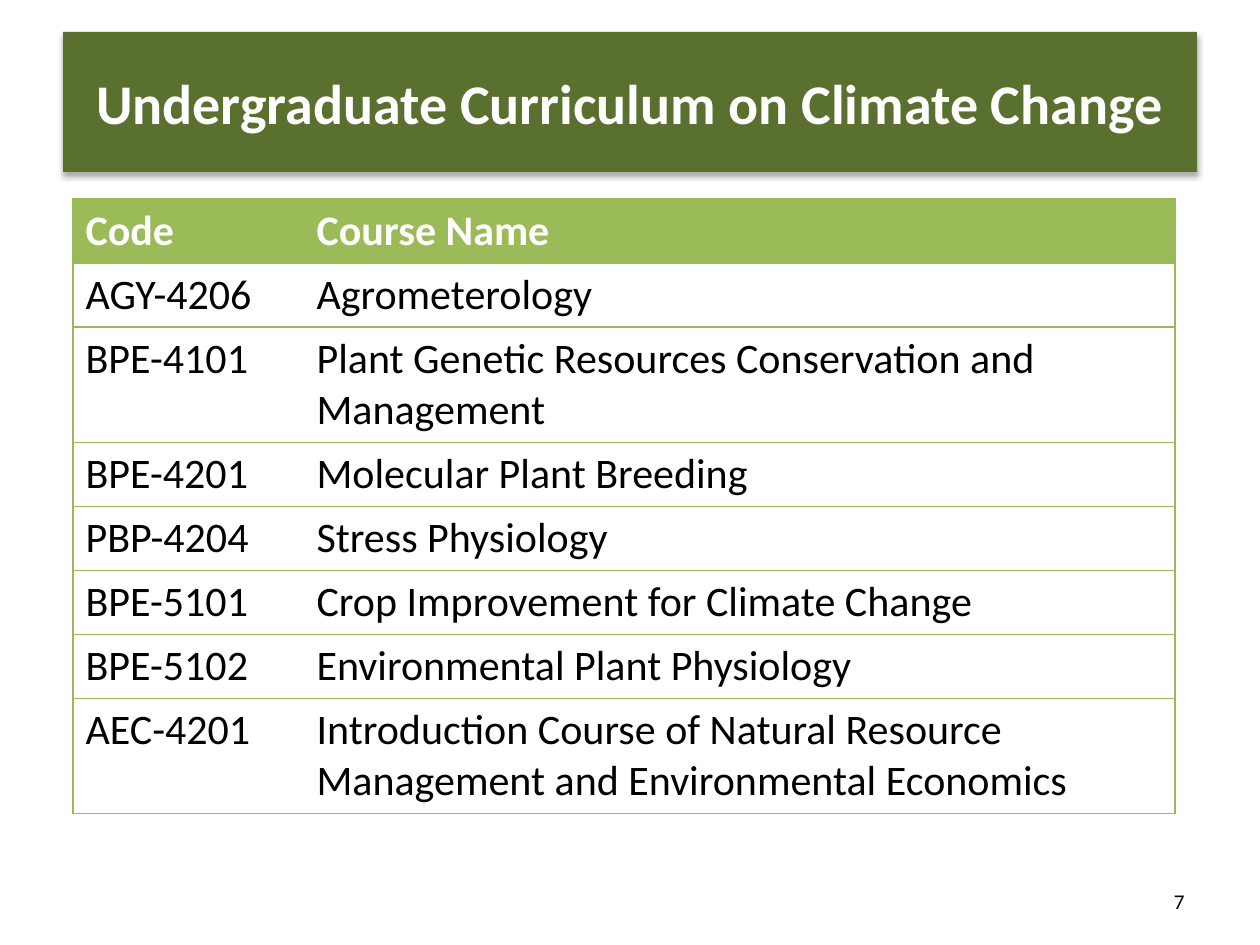
"""Build the slide that lists undergraduate courses on climate change."""
from lxml.etree import SubElement
from pptx import Presentation
from pptx.dml.color import RGBColor
from pptx.enum.text import MSO_ANCHOR, PP_ALIGN
from pptx.oxml.ns import qn
from pptx.util import Pt

TITLE = "Undergraduate Curriculum on Climate Change"
ROWS = [
    ("Code", "Course Name"),
    ("AGY-4206", "Agrometerology"),
    ("BPE-4101", "Plant Genetic Resources Conservation and Management"),
    ("BPE-4201", "Molecular Plant Breeding"),
    ("PBP-4204", "Stress Physiology"),
    ("BPE-5101", "Crop Improvement for Climate Change"),
    ("BPE-5102", "Environmental Plant Physiology"),
    ("AEC-4201", "Introduction Course of Natural Resource "
                 "Management and Environmental Economics"),
]
NUMBER = "7"
WIDTHS = (231, 871)
LOW, TALL = 64, 115
TALL_ROWS = (2, 7)
FONT = "Calibri"
GREEN, HEAD, LINE = "5A702E", "9BBB59", "98B955"
WHITE, BLACK = "FFFFFF", "000000"


def px(n):
    return round(n * 914400 / 126)


def color(code):
    return RGBColor.from_string(code)


def write(frame, text, size, code, bold=False, align=PP_ALIGN.LEFT):
    para = frame.paragraphs[0]
    para.alignment = align
    run = para.add_run()
    run.text = text
    font = run.font
    font.name, font.size, font.bold = FONT, Pt(size), bold
    font.color.rgb = color(code)


def place(shape, left, top, width, height):
    shape.left, shape.top = px(left), px(top)
    shape.width, shape.height = px(width), px(height)


def tint(parent, code):
    fill = SubElement(parent, qn("a:solidFill"))
    return SubElement(fill, qn("a:srgbClr"), val=code)


def shade(shape):
    effects = SubElement(shape._element.spPr, qn("a:effectLst"))
    outer = SubElement(effects, qn("a:outerShdw"), blurRad=str(Pt(3.5)),
                       dist=str(Pt(2.2)), dir="5400000", rotWithShape="0")
    SubElement(tint_shadow(outer), qn("a:alpha"), val="32000")


def tint_shadow(outer):
    return SubElement(outer, qn("a:srgbClr"), val=BLACK)


def edge(cell, inner):
    props = cell._tc.get_or_add_tcPr()
    for side in ("lnL", "lnR", "lnT", "lnB"):
        line = SubElement(props, qn(f"a:{side}"), w=str(Pt(0.75)))
        if side == inner:
            SubElement(line, qn("a:noFill"))
        else:
            tint(line, LINE)


def add_title(slide):
    title = slide.shapes.title
    place(title, 63, 32, 1134, 140)
    title.fill.solid()
    title.fill.fore_color.rgb = color(GREEN)
    title.line.fill.background()
    shade(title)
    frame = title.text_frame
    frame.vertical_anchor = MSO_ANCHOR.MIDDLE
    write(frame, TITLE, 32, WHITE, True, PP_ALIGN.CENTER)


def add_courses(slide):
    heights = [TALL if i in TALL_ROWS else LOW for i in range(len(ROWS))]
    box = (73, 199, sum(WIDTHS), sum(heights))
    table = slide.shapes.add_table(len(ROWS), len(WIDTHS), *map(px, box)).table
    table.horz_banding = False
    for col, width in zip(table.columns, WIDTHS):
        col.width = px(width)
    for i, (row, height) in enumerate(zip(ROWS, heights)):
        table.rows[i].height = px(height)
        for j, text in enumerate(row):
            cell = table.cell(i, j)
            edge(cell, ("lnR", "lnL")[j])
            if i == 0:
                cell.fill.solid()
                cell.fill.fore_color.rgb = color(HEAD)
            else:
                cell.fill.background()
            write(cell.text_frame, text, 24, BLACK if i else WHITE, i == 0)


def add_number(slide):
    box = slide.shapes.add_textbox(*map(px, (903, 876, 294, 50)))
    frame = box.text_frame
    frame.word_wrap = True
    frame.vertical_anchor = MSO_ANCHOR.MIDDLE
    write(frame, NUMBER, 12, BLACK, align=PP_ALIGN.RIGHT)


def main():
    deck = Presentation()
    deck.slide_width, deck.slide_height = px(1260), px(945)
    slide = deck.slides.add_slide(deck.slide_layouts[5])
    add_title(slide)
    add_courses(slide)
    add_number(slide)
    deck.save("out.pptx")


if __name__ == "__main__":
    main()
